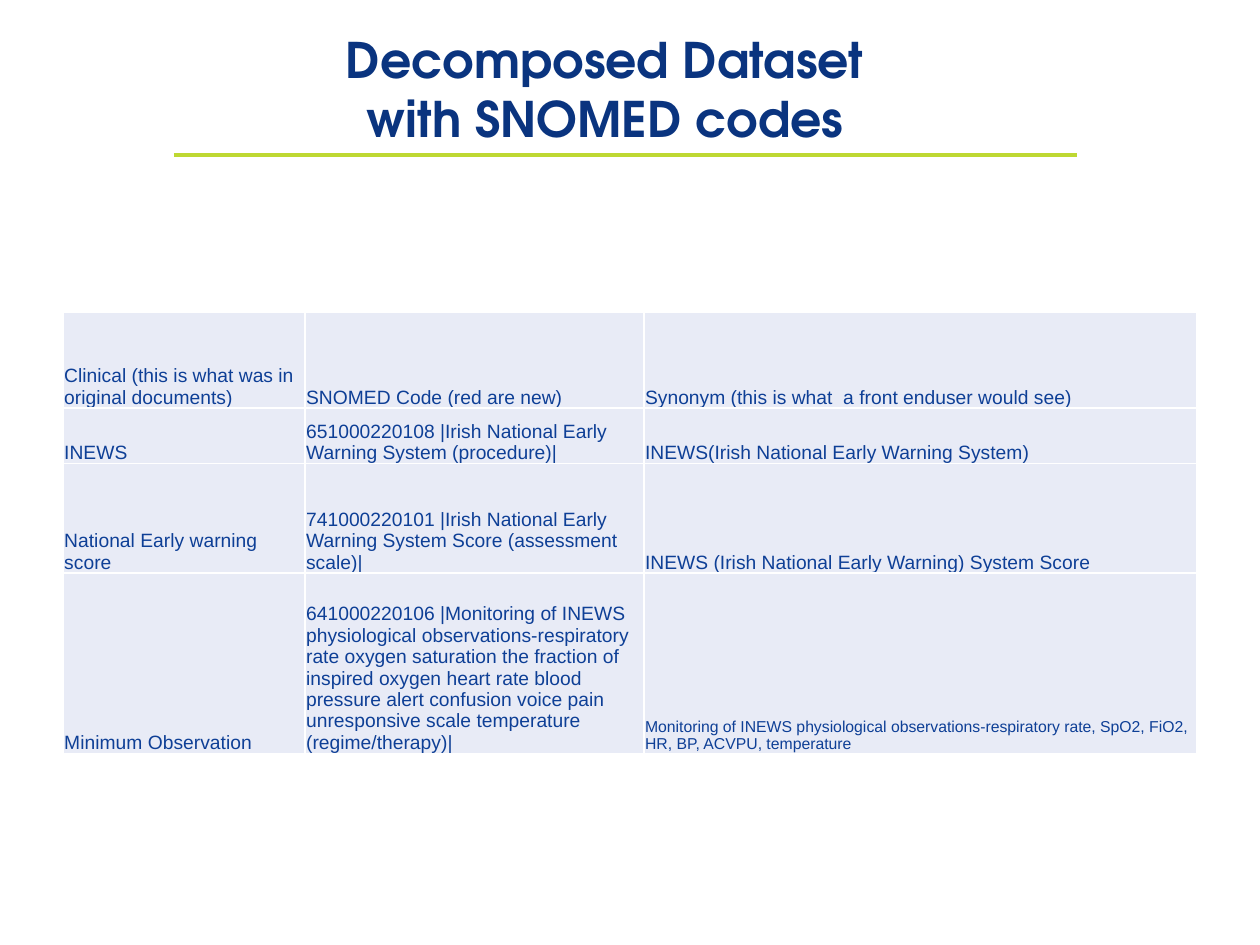
from lxml.etree import SubElement
from pptx import Presentation
from pptx.dml.color import RGBColor
from pptx.enum.shapes import MSO_CONNECTOR
from pptx.enum.text import MSO_ANCHOR as Anchor, PP_ALIGN as Align
from pptx.oxml.ns import qn
from pptx.util import Inches, Pt

COLORS = {
    "title": "0A347F",
    "rule": "BED832",
    "cell_text": "0E3F96",
    "cell_fill": "E8EBF6",
    "border": "FFFFFF",
}
SLIDE_WIDTH, SLIDE_HEIGHT = 10, 7.5
TITLE_LEFT, TITLE_WIDTH = 1.38, 7.17
RULE_Y = 1.23
TABLE_LEFT, TABLE_TOP = 0.5, 2.48
COLUMN_WIDTHS = [1.92, 2.69, 4.39]
ROW_HEIGHTS = [0.76, 0.44, 0.87, 1.43]
BODY_SIZE, SMALL_SIZE = 11, 9

CODE_ROWS = [
    ["Clinical (this is what was in original documents)",
     "SNOMED Code (red are new)",
     "Synonym (this is what  a front enduser would see)"],
    ["INEWS",
     "651000220108 |Irish National Early Warning System (procedure)|",
     "INEWS(Irish National Early Warning System)"],
    ["National Early warning score",
     "741000220101 |Irish National Early Warning System Score (assessment scale)|",
     "INEWS (Irish National Early Warning) System Score"],
    ["Minimum Observation",
     "641000220106 |Monitoring of INEWS physiological observations-respiratory "
     "rate oxygen saturation the fraction of inspired oxygen heart rate blood "
     "pressure alert confusion voice pain unresponsive scale temperature "
     "(regime/therapy)|",
     "Monitoring of INEWS physiological observations-respiratory rate, SpO2, "
     "FiO2, HR, BP, ACVPU, temperature"],
]
SMALL_CELL = (3, 2)


def color(name):
    return RGBColor.from_string(COLORS[name])


def format_runs(paragraph, font_name, size, color_name, bold=False):
    for run in paragraph.runs:
        run.font.name = font_name
        run.font.size = Pt(size)
        run.font.bold = bold
        run.font.color.rgb = color(color_name)


def add_title(slide, text):
    title = slide.shapes.add_textbox(
        Inches(TITLE_LEFT), Inches(0.17), Inches(TITLE_WIDTH), Inches(1.06))
    frame = title.text_frame
    frame.word_wrap = True
    frame.vertical_anchor = Anchor.MIDDLE
    frame.margin_right = Inches(0.43)  # centres the title left of the rule's middle
    frame.text = text
    heading = frame.paragraphs[0]
    heading.alignment = Align.CENTER
    format_runs(heading, "TeX Gyre Adventor", 28, "title", bold=True)


def add_title_rule(slide):
    rule = slide.shapes.add_connector(
        MSO_CONNECTOR.STRAIGHT, Inches(TITLE_LEFT), Inches(RULE_Y),
        Inches(TITLE_LEFT + TITLE_WIDTH), Inches(RULE_Y))
    rule.line.color.rgb = color("rule")
    rule.line.width = Pt(1.75)
    SubElement(rule._element.spPr, qn("a:effectLst"))


def add_borders(cell):
    properties = cell._tc.get_or_add_tcPr()
    for position, side in enumerate(("lnL", "lnR", "lnT", "lnB")):
        border = SubElement(properties, qn(f"a:{side}"), w=str(Pt(1)))
        fill = SubElement(border, qn("a:solidFill"))
        SubElement(fill, qn("a:srgbClr"), val=COLORS["border"])
        properties.insert(position, border)  # borders come before the fill


def fill_cell(cell, text, size):
    cell.text_frame.text = text
    format_runs(cell.text_frame.paragraphs[0], "Arial", size, "cell_text")
    cell.vertical_anchor = Anchor.BOTTOM
    cell.margin_left = cell.margin_right = cell.margin_top = Inches(0.01)
    cell.margin_bottom = 0
    cell.fill.solid()
    cell.fill.fore_color.rgb = color("cell_fill")
    add_borders(cell)


def add_code_table(slide):
    table = slide.shapes.add_table(
        len(ROW_HEIGHTS), len(COLUMN_WIDTHS),
        Inches(TABLE_LEFT), Inches(TABLE_TOP),
        Inches(sum(COLUMN_WIDTHS)), Inches(sum(ROW_HEIGHTS))).table
    table.first_row = table.horz_banding = False
    for column, width in zip(table.columns, COLUMN_WIDTHS):
        column.width = Inches(width)
    for row, height in zip(table.rows, ROW_HEIGHTS):
        row.height = Inches(height)
    for r, texts in enumerate(CODE_ROWS):
        for c, text in enumerate(texts):
            size = SMALL_SIZE if (r, c) == SMALL_CELL else BODY_SIZE
            fill_cell(table.cell(r, c), text, size)


def main():
    deck = Presentation()
    deck.slide_width = Inches(SLIDE_WIDTH)
    deck.slide_height = Inches(SLIDE_HEIGHT)
    slide = deck.slides.add_slide(deck.slide_layouts[6])
    add_title_rule(slide)
    add_title(slide, "Decomposed Dataset\vwith SNOMED codes")
    add_code_table(slide)
    deck.save("out.pptx")


if __name__ == "__main__":
    main()
